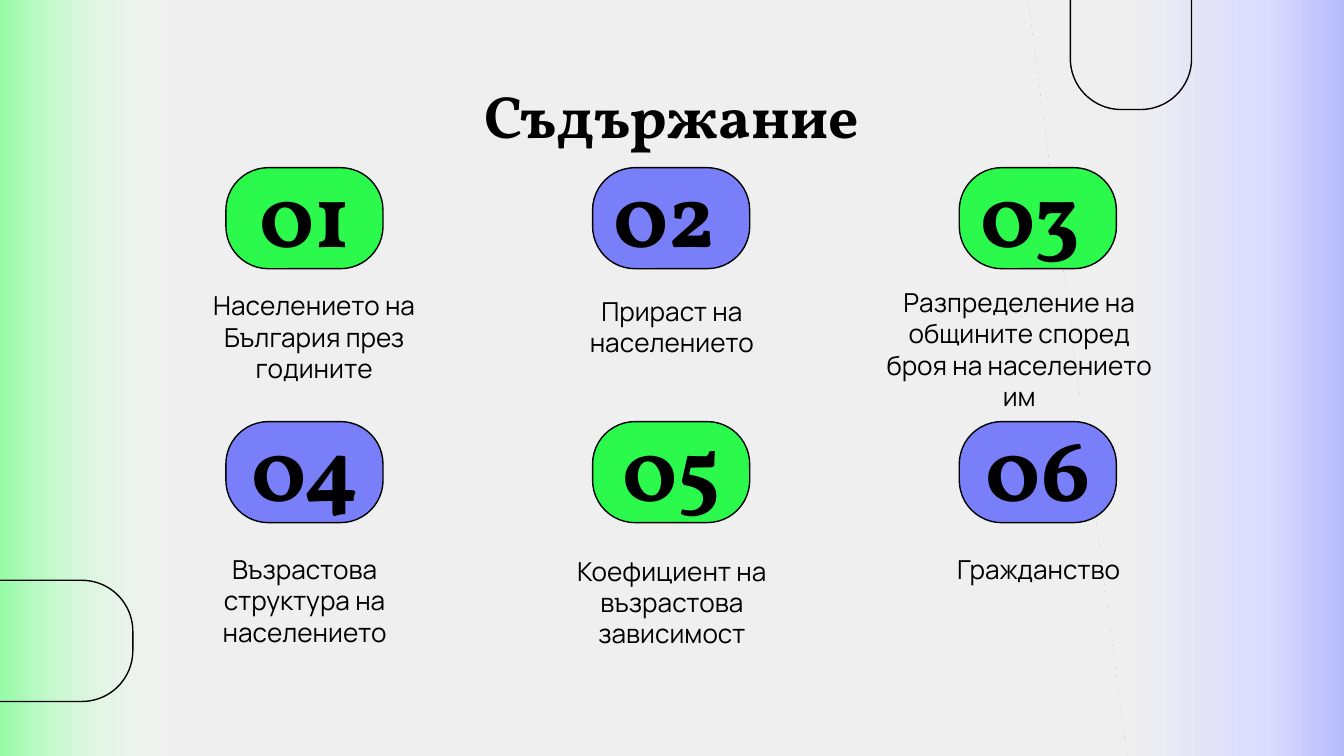
from dataclasses import dataclass

from lxml import etree
from pptx import Presentation
from pptx.dml.color import RGBColor
from pptx.enum.shapes import MSO_SHAPE
from pptx.enum.text import MSO_ANCHOR, PP_ALIGN
from pptx.oxml.ns import qn
from pptx.util import Cm, Pt

PARALLELOGRAM = MSO_SHAPE.PARALLELOGRAM
ROUNDED = MSO_SHAPE.ROUNDED_RECTANGLE
TOP, MIDDLE = MSO_ANCHOR.TOP, MSO_ANCHOR.MIDDLE
LEFT, CENTER = PP_ALIGN.LEFT, PP_ALIGN.CENTER


@dataclass(frozen=True)
class Theme:
    ink: str = "000000"
    page: str = "EFEFEF"
    green: str = "2BF94B"
    light_green: str = "95FCA5"
    violet: str = "797EF9"
    light_violet: str = "DBDCFE"
    white: str = "FFFFFF"
    heading_font: str = "Vollkorn"
    body_font: str = "Manrope"
    title_size: int = 32
    number_size: int = 48
    caption_size: int = 14
    line_width: float = 0.75
    inset: float = 0.25
    roundness: float = 0.42


class SlideBuilder:
    def __init__(self, slide, theme):
        self.slide = slide
        self.theme = theme

    def background(self):
        fill = self.slide.background.fill
        fill.solid()
        fill.fore_color.rgb = RGBColor.from_string(self.theme.page)

    def shape(self, kind, box, adjustment):
        shape = self.slide.shapes.add_shape(kind, *map(Cm, box))
        shape.shadow.inherit = False
        shape.adjustments[0] = adjustment
        return shape

    def glow(self, box, stops, rotation=0):
        """Mirrored parallelogram; stops are (percent, colour, opacity percent)."""
        shape = self.shape(PARALLELOGRAM, box, 0.25)
        shape.rotation = rotation
        shape._element.spPr.find(qn("a:xfrm")).set("flipH", "1")
        shape.line.fill.background()
        shape.fill.gradient()
        shape.fill.gradient_angle = 180
        stop_list = shape._element.spPr.find(qn("a:gradFill")).find(qn("a:gsLst"))
        for old_stop in list(stop_list):
            stop_list.remove(old_stop)
        for percent, colour, opacity in stops:
            stop = etree.SubElement(stop_list, qn("a:gs"), pos=str(percent * 1000))
            tint = etree.SubElement(stop, qn("a:srgbClr"), val=colour)
            if opacity < 100:
                etree.SubElement(tint, qn("a:alpha"), val=str(opacity * 1000))

    def pill(self, box, colour=None):
        shape = self.shape(ROUNDED, box, self.theme.roundness)
        shape.line.color.rgb = RGBColor.from_string(self.theme.ink)
        shape.line.width = Pt(self.theme.line_width)
        if colour:
            shape.fill.solid()
            shape.fill.fore_color.rgb = RGBColor.from_string(colour)
        else:
            shape.fill.background()

    def text(self, box, words, font, size, bold=False, align=CENTER, anchor=TOP):
        frame = self.slide.shapes.add_textbox(*map(Cm, box)).text_frame
        frame.word_wrap = True
        frame.vertical_anchor = anchor
        frame.margin_left = frame.margin_right = Cm(self.theme.inset)
        frame.margin_top = frame.margin_bottom = Cm(self.theme.inset)
        frame.text = words
        para = frame.paragraphs[0]
        para.alignment = align
        span = para.runs[0]
        span.font.name = font
        span.font.size = Pt(size)
        span.font.bold = bold
        span.font.color.rgb = RGBColor.from_string(self.theme.ink)

    def heading(self, box, words, size, **options):
        self.text(box, words, self.theme.heading_font, size, bold=True, **options)

    def caption(self, box, words):
        self.text(box, words, self.theme.body_font, self.theme.caption_size)


# Caption, its box, and the alignment of its number, in reading order
TOPICS = [
    ("Населението на България през годините", (3.25, 5.23, 5.38, 1.96), CENTER),
    ("Прираст на населението", (10.01, 5.33, 5.38, 1.8), LEFT),
    ("Разпределение на общините според броя на населението им",
     (16.38, 5.16, 5.77, 2.44), LEFT),
    ("Възрастова структура на населението", (3.07, 10.21, 5.38, 2.34), CENTER),
    ("Коефициент на възрастова зависимост", (10.01, 10.24, 5.38, 2.34), CENTER),
    ("Гражданство", (16.94, 10.21, 5.38, 1.8), CENTER),
]
COLUMNS = 3
GRID_LEFT, GRID_TOP = 4.27, 3.17
COLUMN_STEP, ROW_STEP = 6.93, 4.8
PILL_WIDTH, PILL_HEIGHT = 2.97, 1.91
NUMBER_WIDTH, NUMBER_HEIGHT, NUMBER_OFFSET = 2.69, 1.37, 0.15


def main():
    theme = Theme()
    deck = Presentation()
    deck.slide_width, deck.slide_height = Cm(25.4), Cm(14.29)
    page = SlideBuilder(deck.slides.add_slide(deck.slide_layouts[6]), theme)

    # Background glows and outlines running off the edges
    page.background()
    page.glow((19.15, -2.21, 8.71, 16.64),
              [(0, theme.violet, 100), (45, theme.light_violet, 100),
               (76, theme.page, 100), (100, theme.page, 100)], rotation=180)
    page.glow((-2.18, -2.21, 8.71, 16.64),
              [(0, theme.green, 100), (25, theme.light_green, 100),
               (63, theme.white, 0), (100, theme.white, 0)])
    page.pill((-7.37, 10.97, 9.88, 2.29))
    page.pill((20.23, -7.81, 2.29, 9.88))

    # Title
    page.heading((1.98, 1.24, 21.44, 1.6), "Съдържание", theme.title_size)

    # Numbered topics with alternating colours
    for index, (words, caption_box, align) in enumerate(TOPICS):
        row, column = divmod(index, COLUMNS)
        left = GRID_LEFT + column * COLUMN_STEP
        top = GRID_TOP + row * ROW_STEP
        colour = theme.violet if index % 2 else theme.green
        page.pill((left, top, PILL_WIDTH, PILL_HEIGHT), colour)
        number_box = (left + NUMBER_OFFSET, top + NUMBER_OFFSET,
                      NUMBER_WIDTH, NUMBER_HEIGHT)
        page.heading(number_box, f"{index + 1:02d}", theme.number_size,
                     align=align, anchor=MIDDLE)
        page.caption(caption_box, words)

    deck.save("out.pptx")


if __name__ == "__main__":
    main()
